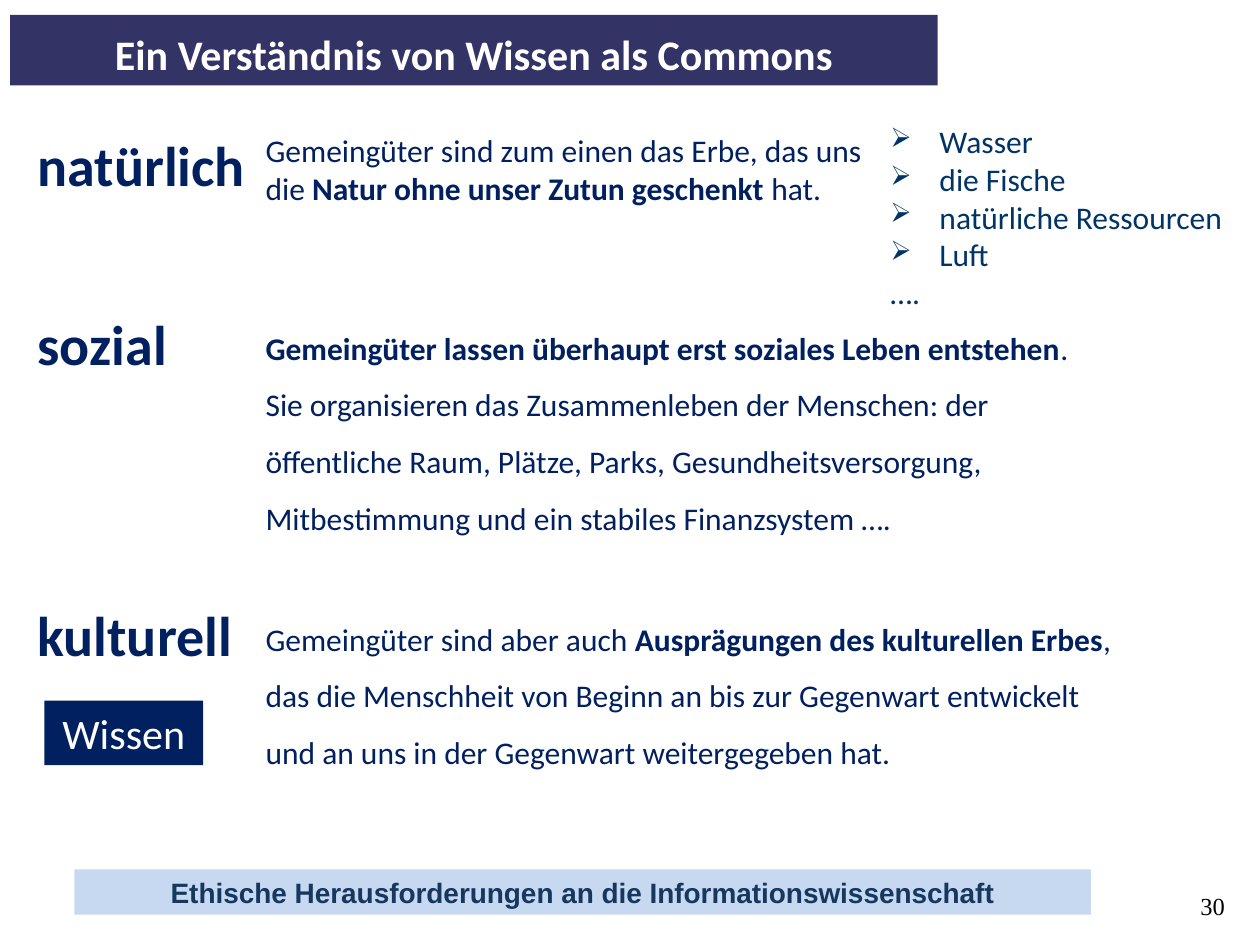
from dataclasses import dataclass

import pptx
import pptx.dml.color
import pptx.enum.shapes
import pptx.enum.text
import pptx.oxml.ns
import pptx.util
from lxml import etree

Pt = pptx.util.Pt
ALIGN = pptx.enum.text.PP_ALIGN
ANCHOR = pptx.enum.text.MSO_ANCHOR


@dataclass(frozen=True)
class Theme:
    font: str = "Calibri"
    footer_font: str = "Arial"
    number_font: str = "Times New Roman"
    navy: str = "002060"
    banner: str = "333366"
    list_blue: str = "003366"
    footer_fill: str = "C6D9F1"
    footer_text: str = "17375E"
    white: str = "FFFFFF"
    black: str = "000000"
    heading: int = 32
    title: int = 24
    body: int = 18
    footer: int = 16
    number: int = 14


def color(value):
    return pptx.dml.color.RGBColor.from_string(value)


def write(paragraph, text, *, size, ink, font, bold=False, align=ALIGN.LEFT, spacing=None):
    """Fill a paragraph; parts between ** marks are switched to bold."""
    paragraph.alignment = align
    if spacing:
        paragraph.line_spacing = spacing
    for index, part in enumerate(text.split("**")):
        if part:
            run = paragraph.add_run()
            run.text = part
            run.font.name = font
            run.font.size = Pt(size)
            run.font.bold = bold or index % 2 == 1
            run.font.color.rgb = color(ink)


class SlideBuilder:
    def __init__(self, slide, theme):
        self.slide = slide
        self.theme = theme

    def frame(self, shape, anchor=ANCHOR.TOP, insets=(7.2, 3.6, 7.2, 3.6)):
        frame = shape.text_frame
        frame.word_wrap = True
        frame.vertical_anchor = anchor
        (frame.margin_left, frame.margin_top,
         frame.margin_right, frame.margin_bottom) = map(Pt, insets)
        return frame

    def text(self, box, text, *, anchor=ANCHOR.TOP, insets=(7.2, 3.6, 7.2, 3.6), **style):
        shape = self.slide.shapes.add_textbox(*map(Pt, box))
        style = {"size": self.theme.body, "ink": self.theme.navy,
                 "font": self.theme.font, **style}
        write(self.frame(shape, anchor, insets).paragraphs[0], text, **style)

    def panel(self, box, text, fill, *, anchor=ANCHOR.MIDDLE, **style):
        shape = self.slide.shapes.add_shape(
            pptx.enum.shapes.MSO_SHAPE.RECTANGLE, *map(Pt, box))
        shape.shadow.inherit = False
        shape.fill.solid()
        shape.fill.fore_color.rgb = color(fill)
        shape.line.fill.background()
        style = {"size": self.theme.title, "ink": self.theme.white,
                 "font": self.theme.font, **style}
        write(self.frame(shape, anchor).paragraphs[0], text, align=ALIGN.CENTER, **style)

    def bullet_list(self, box, items, closing):
        frame = self.frame(self.slide.shapes.add_textbox(*map(Pt, box)))
        for index, item in enumerate([*items, closing]):
            paragraph = frame.add_paragraph() if index else frame.paragraphs[0]
            if index < len(items):
                self.bullet(paragraph)
            write(paragraph, item, size=self.theme.body,
                  ink=self.theme.list_blue, font=self.theme.font)

    def bullet(self, paragraph):
        qn = pptx.oxml.ns.qn
        properties = paragraph._p.get_or_add_pPr()
        properties.set("marL", str(Pt(28)))
        properties.set("indent", str(Pt(-28)))
        bullet_color = etree.SubElement(properties, qn("a:buClr"))
        etree.SubElement(bullet_color, qn("a:srgbClr"), val=self.theme.list_blue)
        etree.SubElement(properties, qn("a:buSzPct"), val="86000")
        etree.SubElement(properties, qn("a:buChar"), char="➢")


def main():
    theme = Theme()
    deck = pptx.Presentation()
    deck.slide_width, deck.slide_height = Pt(720), Pt(540)
    builder = SlideBuilder(deck.slides.add_slide(deck.slide_layouts[6]), theme)

    # Footer and page number
    builder.panel((42.5, 496.8, 581, 25.9),
                  "Ethische Herausforderungen an die Informationswissenschaft",
                  theme.footer_fill, size=theme.footer, ink=theme.footer_text,
                  font=theme.footer_font, bold=True)
    builder.text((650.9, 493.2, 49, 37.4), "30", anchor=ANCHOR.BOTTOM,
                 insets=(0, 0, 0, 4.5), size=theme.number, ink=theme.black,
                 font=theme.number_font, align=ALIGN.RIGHT)

    # Three kinds of commons: heading, top, width, height, spacing, explanation
    commons = [
        ("natürlich", 71.3, 370, 51, None,
         "Gemeingüter sind zum einen das Erbe, das uns die "
         "**Natur ohne unser Zutun geschenkt **hat."),
        ("sozial", 173.5, 479.5, 180.7, 1.5,
         "**Gemeingüter lassen überhaupt erst soziales Leben entstehen**. "
         "Sie organisieren das Zusammenleben der Menschen: der öffentliche Raum, "
         "Plätze, Parks, Gesundheitsversorgung, Mitbestimmung und ein stabiles "
         "Finanzsystem …."),
        ("kulturell", 339.8, 501.8, 138.2, 1.5,
         "Gemeingüter sind aber auch **Ausprägungen des kulturellen Erbes**, "
         "das die Menschheit von Beginn an bis zur Gegenwart entwickelt und an uns "
         "in der Gegenwart weitergegeben hat."),
    ]
    for heading, top, width, height, spacing, explanation in commons:
        builder.text((14.4, top, 141.8, 44.6), heading, size=theme.heading, bold=True)
        builder.text((144.7, top, width, height), explanation, spacing=spacing)

    # Examples of natural commons
    builder.bullet_list((501.8, 66.2, 218.2, 118),
                        ["Wasser", "die Fische", "natürliche Ressourcen", "Luft"], "….")

    # Knowledge as cultural commons
    builder.panel((25.4, 400.3, 90.7, 37), "Wissen", theme.navy)

    # Title banner
    builder.panel((5.8, 8.6, 530, 40.3), "Ein Verständnis von Wissen als Commons",
                  theme.banner, anchor=ANCHOR.BOTTOM, bold=True)

    deck.save("out.pptx")


if __name__ == "__main__":
    main()
